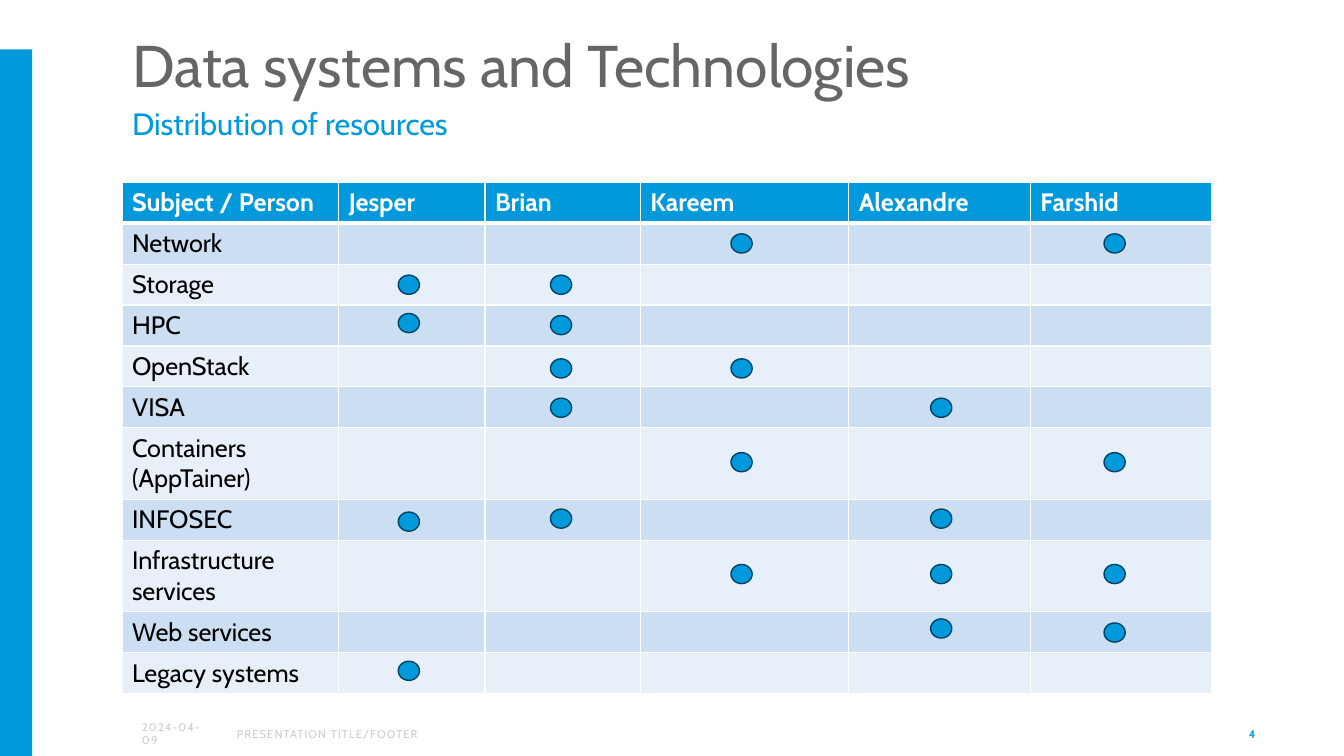
from lxml import etree
from pptx import Presentation
from pptx.dml.color import RGBColor
from pptx.enum.shapes import MSO_SHAPE
from pptx.enum.text import MSO_ANCHOR, MSO_AUTO_SIZE, PP_ALIGN
from pptx.oxml.ns import qn
from pptx.util import Inches, Pt

RECTANGLE, OVAL = MSO_SHAPE.RECTANGLE, MSO_SHAPE.OVAL
TOP, MIDDLE, BOTTOM = MSO_ANCHOR.TOP, MSO_ANCHOR.MIDDLE, MSO_ANCHOR.BOTTOM
LEFT, RIGHT = PP_ALIGN.LEFT, PP_ALIGN.RIGHT
NO_AUTOSIZE = MSO_AUTO_SIZE.NONE

FONT = "Cabin"
COLORS = {
    "blue": "0099DC",
    "outline": "004360",
    "title": "666666",
    "footer": "CCCCCC",
    "odd_row": "CCDEF2",
    "even_row": "E7EFF9",
    "white": "FFFFFF",
    "black": "000000",
}

# Person: (column width, left edge of the dots)
PEOPLE = {
    "Jesper": (1.45, 3.95),
    "Brian": (1.54, 5.46),
    "Kareem": (2.07, 7.25),
    "Alexandre": (1.8, 9.23),
    "Farshid": (1.8, 10.95),
}
SUBJECT_WIDTH = 2.15
ROW_HEIGHT, TWO_LINE_HEIGHT = 0.4, 0.71
TWO_LINE_SUBJECTS = ("Containers (AppTainer)", "Infrastructure services")

# Subject: top edge of the dot of each person involved
ASSIGNMENTS = {
    "Network": {"Kareem": 2.32, "Farshid": 2.32},
    "Storage": {"Jesper": 2.73, "Brian": 2.73},
    "HPC": {"Jesper": 3.11, "Brian": 3.13},
    "OpenStack": {"Brian": 3.56, "Kareem": 3.56},
    "VISA": {"Brian": 3.95, "Alexandre": 3.95},
    "Containers (AppTainer)": {"Kareem": 4.49, "Farshid": 4.49},
    "INFOSEC": {"Jesper": 5.08, "Brian": 5.05, "Alexandre": 5.05},
    "Infrastructure services": {"Kareem": 5.6, "Alexandre": 5.6, "Farshid": 5.6},
    "Web services": {"Alexandre": 6.14, "Farshid": 6.18},
    "Legacy systems": {"Jesper": 6.56},
}


def color(name):
    return RGBColor.from_string(COLORS[name])


def add_run(paragraph, text, size, color_name, bold=False, spacing=0):
    run = paragraph.add_run()
    run.text = text
    run.font.name = FONT
    run.font.size = Pt(size)
    run.font.bold = bold
    run.font.color.rgb = color(color_name)
    if spacing:
        run.font._element.set("spc", str(round(spacing * 100)))


def fill_placeholder(placeholder, box, text, size, color_name, anchor, insets):
    """Move a placeholder and give it one unbulleted, left-aligned line."""
    placeholder.left, placeholder.top, placeholder.width, placeholder.height = map(Inches, box)
    frame = placeholder.text_frame
    frame.auto_size = NO_AUTOSIZE
    frame.vertical_anchor = anchor
    frame.margin_top, frame.margin_bottom = map(Inches, insets)
    paragraph = frame.paragraphs[0]
    properties = paragraph._p.get_or_add_pPr()
    properties.set("marL", "0")
    properties.set("indent", "0")
    etree.SubElement(properties, qn("a:buNone"))
    paragraph.alignment = LEFT
    paragraph.line_spacing = 0.9 if anchor == BOTTOM else 1.0
    paragraph.space_before = Pt(0)
    add_run(paragraph, text, size, color_name)


def add_footer_text(slide, box, text, color_name, alignment=LEFT, bold=False, spacing=0.8):
    frame = slide.shapes.add_textbox(*map(Inches, box)).text_frame
    frame.word_wrap = True
    frame.vertical_anchor = MIDDLE
    paragraph = frame.paragraphs[0]
    paragraph.alignment = alignment
    add_run(paragraph, text, 8, color_name, bold, spacing)


def add_filled_shape(slide, kind, box, line_name=None):
    shape = slide.shapes.add_shape(kind, *map(Inches, box))
    shape.shadow.inherit = False
    shape.fill.solid()
    shape.fill.fore_color.rgb = color("blue")
    if line_name:
        shape.line.color.rgb = color(line_name)
        shape.line.width = Pt(1)
    else:
        shape.line.fill.background()


def set_borders(cell, bottom_width):
    """Draw white borders, which must come before the cell's fill in the XML."""
    properties = cell._tc.get_or_add_tcPr()
    for side, width in (("L", 1), ("R", 1), ("T", 1), ("B", bottom_width)):
        line = etree.SubElement(properties, qn(f"a:ln{side}"), w=str(Pt(width)))
        fill = etree.SubElement(line, qn("a:solidFill"))
        etree.SubElement(fill, qn("a:srgbClr"), val=COLORS["white"])


def fill_cell(cell, text, fill_name, is_header):
    set_borders(cell, 3 if is_header else 1)
    cell.fill.solid()
    cell.fill.fore_color.rgb = color(fill_name)
    paragraph = cell.text_frame.paragraphs[0]
    if text:
        add_run(paragraph, text, 18, "white" if is_header else "black", is_header)
    else:
        paragraph.font.size = Pt(18)
        paragraph.font.name = FONT


def add_resource_table(slide):
    widths = [SUBJECT_WIDTH] + [width for width, _ in PEOPLE.values()]
    rows = [["Subject / Person", *PEOPLE]]
    rows += [[subject] + [""] * len(PEOPLE) for subject in ASSIGNMENTS]
    heights = [TWO_LINE_HEIGHT if row[0] in TWO_LINE_SUBJECTS else ROW_HEIGHT for row in rows]
    table = slide.shapes.add_table(
        len(rows), len(widths), Inches(1.21), Inches(1.81),
        Inches(sum(widths)), Inches(sum(heights)),
    ).table
    for column, width in zip(table.columns, widths):
        column.width = Inches(width)
    for index, (texts, height) in enumerate(zip(rows, heights)):
        table.rows[index].height = Inches(height)
        fill_name = "blue" if index == 0 else ("even_row", "odd_row")[index % 2]
        for cell, text in zip(table.rows[index].cells, texts):
            fill_cell(cell, text, fill_name, index == 0)


def add_assignment_dots(slide):
    for tops in ASSIGNMENTS.values():
        for person, top in tops.items():
            left = PEOPLE[person][1]
            add_filled_shape(slide, OVAL, (left, top, 0.21, 0.19), "outline")


def main():
    presentation = Presentation()
    presentation.slide_width = Inches(13.33)
    presentation.slide_height = Inches(7.5)
    slide = presentation.slides.add_slide(presentation.slide_layouts[1])

    add_filled_shape(slide, RECTANGLE, (0, 0.49, 0.32, 7.01))
    fill_placeholder(slide.shapes.title, (1.21, 0.29, 10.24, 0.72),
                     "Data systems and Technologies", 42, "title", BOTTOM, (0.05, 0.02))
    fill_placeholder(slide.placeholders[1], (1.21, 1.02, 10.24, 0.55),
                     "Distribution of resources", 22, "blue", TOP, (0.02, 0.05))
    add_resource_table(slide)
    add_assignment_dots(slide)
    add_footer_text(slide, (1.31, 7.08, 0.91, 0.4), "2024-04-09", "footer")
    add_footer_text(slide, (2.25, 7.08, 4.72, 0.4), "PRESENTATION TITLE/FOOTER", "footer")
    add_footer_text(slide, (9.55, 7.08, 3, 0.4), "4", "blue", RIGHT, bold=True, spacing=0)
    presentation.save("out.pptx")


if __name__ == "__main__":
    main()
